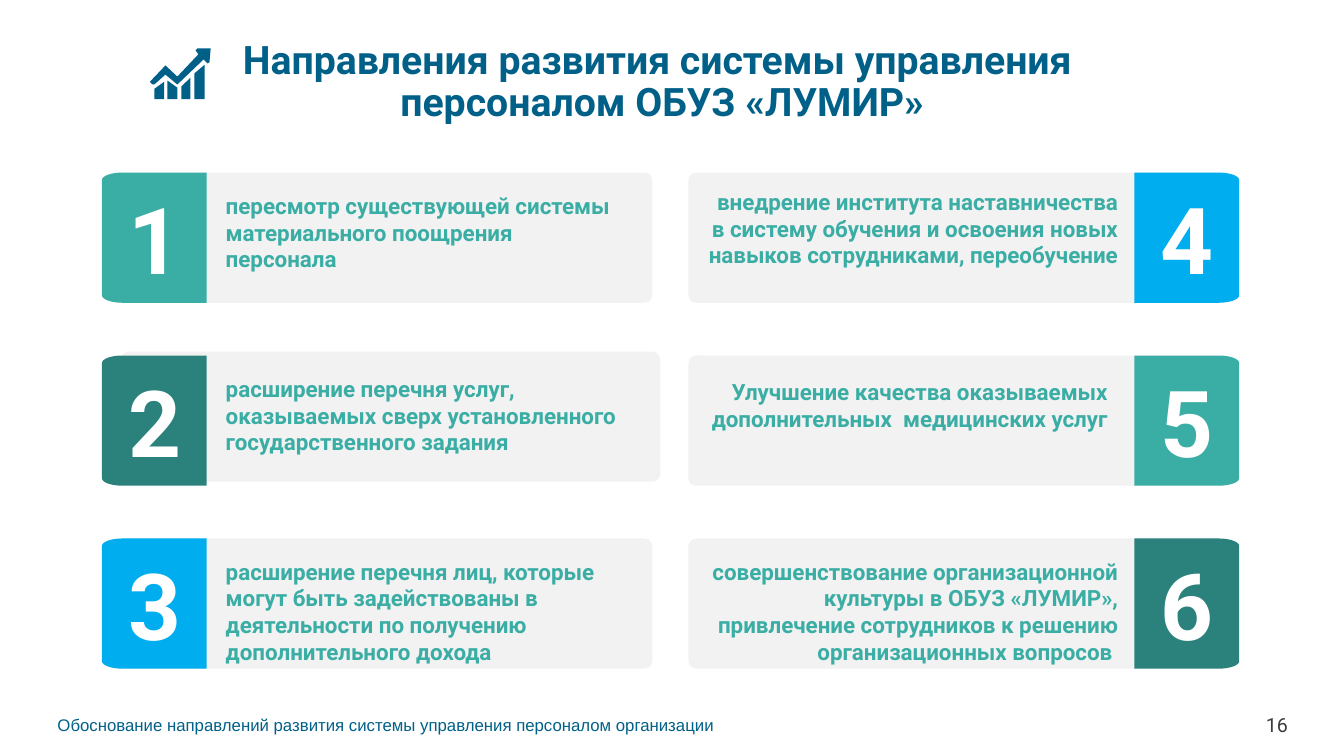
"""Build the slide on directions for developing the personnel management system."""

from dataclasses import dataclass
from math import cos, pi, sin
from typing import NamedTuple

from pptx import Presentation
from pptx.dml.color import RGBColor
from pptx.enum.shapes import MSO_SHAPE as Preset
from pptx.enum.text import MSO_ANCHOR as Anchor, PP_ALIGN as Align
from pptx.util import Cm, Pt

NAVY = RGBColor(0x00, 0x60, 0x88)
TEAL = RGBColor(0x3A, 0xAD, 0xA5)
DARK_TEAL = RGBColor(0x2B, 0x82, 0x7C)
SKY = RGBColor(0x00, 0xAD, 0xEE)
PALE = RGBColor(0xF2, 0xF2, 0xF2)
CHARCOAL = RGBColor(0x3C, 0x3C, 0x3C)
WHITE = RGBColor(0xFF, 0xFF, 0xFF)

ROW_TOP, ROW_PITCH, ROW_COUNT = 4.35, 4.61, 3
PANEL_WIDTH, PANEL_HEIGHT = 13.59, 3.28
BADGE_WIDTH = 2.64
CORNER_X, CORNER_Y, CORNER_STEPS = 0.51, 0.19, 8
NUMBER_WIDTH, NUMBER_HEIGHT = 1.32, 1.52


class Point(NamedTuple):
    x: float
    y: float


class Box(NamedTuple):
    left: float
    top: float
    width: float
    height: float


@dataclass(frozen=True)
class Side:
    panel_left: float
    badge_left: float
    caption_left: float
    caption_width: float
    align: Align
    mirrored: bool


@dataclass(frozen=True)
class Direction:
    caption: str
    color: RGBColor
    lines: int
    caption_drop: float = 0.36
    caption_shift: float = 0
    panel_shift: Point = Point(0, 0)


@dataclass(frozen=True)
class Bar:
    left: float
    right: float
    top_left: float
    top_right: float


LEFT = Side(2.85, 2.57, 5.44, 10.52, Align.LEFT, False)
RIGHT = Side(17.35, 28.59, 17.58, 10.85, Align.RIGHT, True)

DIRECTIONS = [
    Direction("пересмотр существующей системы материального поощрения персонала", TEAL, 3),
    Direction("расширение перечня услуг, оказываемых сверх установленного "
              "государственного задания", DARK_TEAL, 3, panel_shift=Point(0.2, -0.1)),
    Direction("расширение перечня лиц, которые могут быть задействованы в "
              "деятельности по получению дополнительного дохода", SKY, 4),
    Direction("внедрение института наставничества в систему обучения и освоения новых "
              "навыков сотрудниками, переобучение", SKY, 3, caption_drop=0.26),
    Direction("Улучшение качества оказываемых дополнительных  медицинских услуг",
              TEAL, 2, caption_drop=0.45, caption_shift=-0.26),
    Direction("совершенствование организационной культуры в ОБУЗ «ЛУМИР», привлечение "
              "сотрудников к решению организационных вопросов ", DARK_TEAL, 4),
]

ICON_BOTTOM = 2.5
ICON_BARS = [
    Bar(3.89, 4.14, 2.24, 2.06),
    Bar(4.22, 4.47, 2.03, 2.21),
    Bar(4.57, 4.8, 2.18, 1.96),
    Bar(4.9, 5.16, 1.85, 1.63),
]
ICON_ARROW = [
    Point(3.78, 2.06), Point(4.17, 1.65), Point(4.47, 1.93), Point(5, 1.37),
    Point(4.93, 1.27), Point(4.98, 1.22), Point(5.31, 1.22), Point(5.28, 1.57),
    Point(5.23, 1.6), Point(5.13, 1.5), Point(4.47, 2.13), Point(4.17, 1.88),
    Point(3.89, 2.13), Point(3.84, 2.13),
]


def place(box: Box) -> list[Cm]:
    return [Cm(length) for length in box]


def paint(shape, color: RGBColor) -> None:
    shape.fill.solid()
    shape.fill.fore_color.rgb = color
    shape.line.fill.background()
    shape.shadow.inherit = False


def write_text(frame, text: str, *, size: float, color: RGBColor, font: str = "Roboto",
               bold: bool = False, align: Align = Align.LEFT, anchor: Anchor = Anchor.TOP,
               padded: bool = True, spacing: float = 1, before: float = 0) -> None:
    frame.word_wrap = True
    frame.vertical_anchor = anchor
    if not padded:
        frame.margin_left = frame.margin_right = frame.margin_top = frame.margin_bottom = 0
    para = frame.paragraphs[0]
    para.text = text
    para.alignment = align
    para.line_spacing = spacing
    para.space_before = Pt(before)
    for span in para.runs:
        span.font.name = font
        span.font.size = Pt(size)
        span.font.bold = bold
        span.font.color.rgb = color


def add_text(page, box: Box, text: str, **style) -> None:
    write_text(page.shapes.add_textbox(*place(box)).text_frame, text, **style)


def add_outline(shapes, points: list[Point], color: RGBColor) -> None:
    corners = [(Cm(point.x), Cm(point.y)) for point in points]
    builder = shapes.build_freeform(*corners[0])
    builder.add_line_segments(corners[1:], close=True)
    paint(builder.convert_to_shape(), color)


def badge_outline(left: float, top: float, mirrored: bool) -> list[Point]:
    angles = [step * pi / 2 / CORNER_STEPS for step in range(CORNER_STEPS + 1)]
    upper = [Point(CORNER_X * (1 - cos(angle)), CORNER_Y * (1 - sin(angle))) for angle in angles]
    lower = [Point(x, PANEL_HEIGHT - y) for x, y in reversed(upper)]
    edge = [Point(BADGE_WIDTH, 0), Point(BADGE_WIDTH, PANEL_HEIGHT)]
    return [Point(left + (BADGE_WIDTH - x if mirrored else x), top + y)
            for x, y in upper + edge + lower]


def add_direction(page, index: int, direction: Direction) -> None:
    side = (LEFT, RIGHT)[index // ROW_COUNT]
    top = ROW_TOP + index % ROW_COUNT * ROW_PITCH
    shift = direction.panel_shift
    panel = page.shapes.add_shape(Preset.ROUNDED_RECTANGLE, *place(
        Box(side.panel_left + shift.x, top + shift.y, PANEL_WIDTH, PANEL_HEIGHT)))
    panel.adjustments[0] = 0.06
    paint(panel, PALE)
    add_outline(page.shapes, badge_outline(side.badge_left, top, side.mirrored), direction.color)
    add_text(page, Box(side.badge_left + (BADGE_WIDTH - NUMBER_WIDTH) / 2,
                       top + (PANEL_HEIGHT - NUMBER_HEIGHT) / 2, NUMBER_WIDTH, NUMBER_HEIGHT),
             str(index + 1), size=66, color=WHITE, bold=True, align=Align.CENTER,
             anchor=Anchor.MIDDLE, padded=False, before=8)
    add_text(page, Box(side.caption_left + direction.caption_shift, top + direction.caption_drop,
                       side.caption_width, 0.25 + 0.69 * direction.lines),
             direction.caption, size=16, color=TEAL, bold=True, align=side.align)


def add_growth_icon(page) -> None:
    icon = page.shapes.add_group_shape()
    for bar in ICON_BARS:
        add_outline(icon.shapes, [Point(bar.left, bar.top_left), Point(bar.right, bar.top_right),
                                  Point(bar.right, ICON_BOTTOM), Point(bar.left, ICON_BOTTOM)], NAVY)
    add_outline(icon.shapes, ICON_ARROW, NAVY)


def main() -> None:
    deck = Presentation()
    deck.slide_width, deck.slide_height = Cm(33.87), Cm(19.05)
    page = deck.slides.add_slide(deck.slide_layouts[5])
    title = page.shapes.title
    title.left, title.top, title.width, title.height = place(Box(1.47, 1.12, 30.18, 1.93))
    write_text(title.text_frame, "Направления развития системы управления\v персоналом ОБУЗ «ЛУМИР»",
               size=28, color=NAVY, bold=True, align=Align.CENTER, anchor=Anchor.MIDDLE, spacing=0.9)
    add_growth_icon(page)
    for index, direction in enumerate(DIRECTIONS):
        add_direction(page, index, direction)
    add_text(page, Box(1.45, 18.01, 30.2, 0.5),
             "Обоснование направлений развития системы управления персоналом организации",
             size=12, color=NAVY, font="Arial", padded=False)
    add_text(page, Box(31.2, 17.96, 1.26, 0.61), "16", size=14, color=CHARCOAL,
             align=Align.RIGHT, anchor=Anchor.MIDDLE, padded=False)
    deck.save("out.pptx")


if __name__ == "__main__":
    main()
